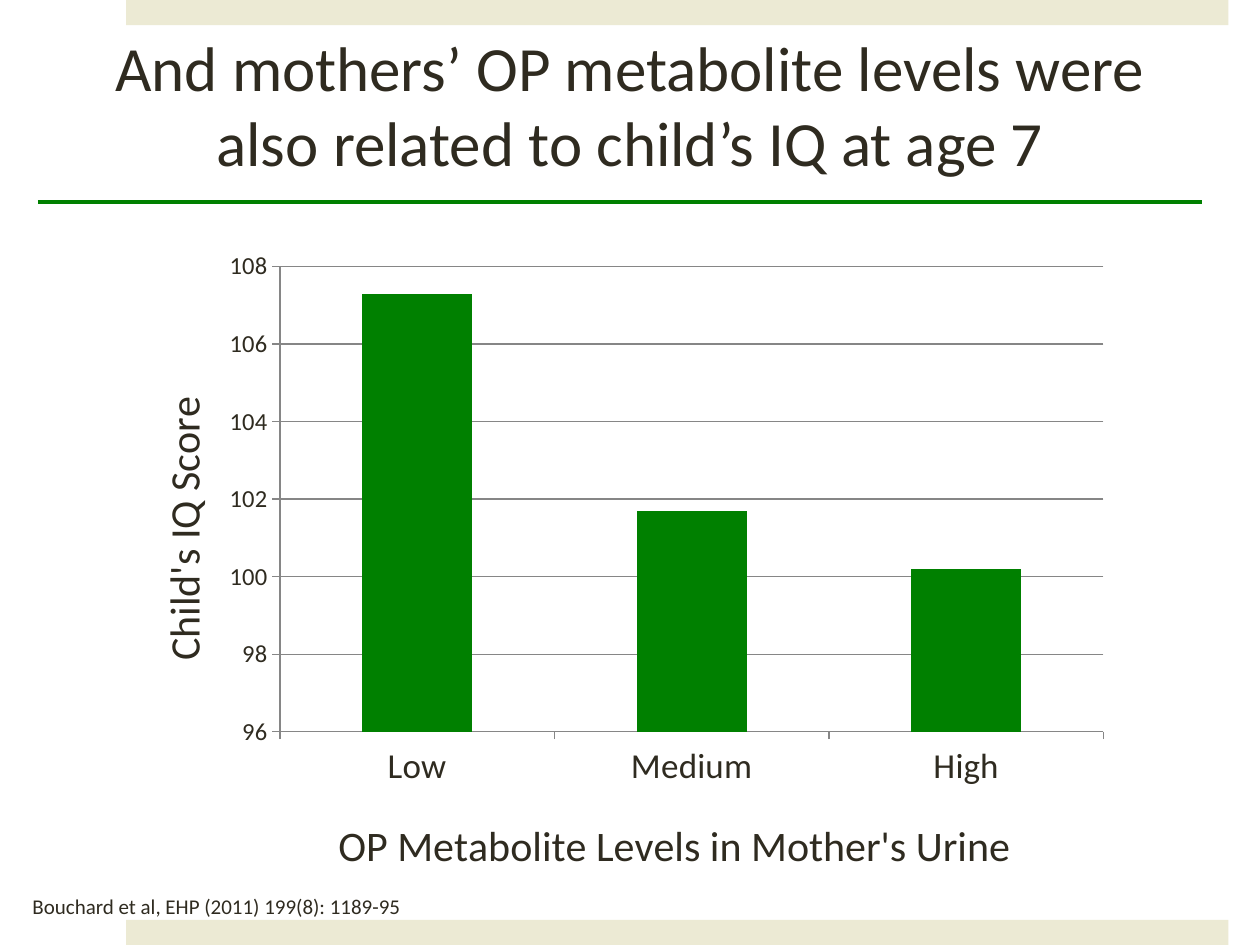
from pptx import Presentation
from pptx.chart.data import CategoryChartData
from pptx.dml.color import RGBColor
from pptx.enum.chart import XL_CHART_TYPE, XL_TICK_MARK
from pptx.enum.shapes import MSO_CONNECTOR, MSO_SHAPE
from pptx.enum.text import MSO_ANCHOR, MSO_AUTO_SIZE, PP_ALIGN
from pptx.oxml import parse_xml
from pptx.oxml.ns import nsdecls, qn
from pptx.util import Inches, Pt

RECTANGLE = MSO_SHAPE.RECTANGLE
STRAIGHT = MSO_CONNECTOR.STRAIGHT
COLUMN_CLUSTERED = XL_CHART_TYPE.COLUMN_CLUSTERED
TICK_OUTSIDE = XL_TICK_MARK.OUTSIDE
TICK_NONE = XL_TICK_MARK.NONE
ANCHOR_MIDDLE = MSO_ANCHOR.MIDDLE
ANCHOR_TOP = MSO_ANCHOR.TOP
FIT_SHAPE = MSO_AUTO_SIZE.SHAPE_TO_FIT_TEXT
FIT_NONE = MSO_AUTO_SIZE.NONE
CENTER = PP_ALIGN.CENTER
LEFT = PP_ALIGN.LEFT

CREAM = RGBColor(0xEC, 0xEA, 0xD4)
GREEN = RGBColor(0x00, 0x80, 0x00)
INK = RGBColor(0x2F, 0x2B, 0x20)
GRAY = RGBColor(0x86, 0x86, 0x86)
FONT_NAME = "Calibri"


def set_attributes(target, values):
    """Set each named attribute of the target."""
    for name, value in values.items():
        setattr(target, name, value)


def format_font(font, size):
    """Give a font the typeface and ink of the slide."""
    set_attributes(font, {"name": FONT_NAME, "size": Pt(size), "bold": False})
    font.color.rgb = INK


def add_band(slide, box):
    """Add a cream decorative band."""
    shape = slide.shapes.add_shape(RECTANGLE, *map(Inches, box))
    shape.shadow.inherit = False
    shape.fill.solid()
    shape.fill.fore_color.rgb = CREAM
    shape.line.fill.background()


def add_rule(slide, left, top, width):
    """Add the green rule below the title."""
    rule = slide.shapes.add_connector(
        STRAIGHT, Inches(left), Inches(top), Inches(left + width), Inches(top)
    )
    rule.line.color.rgb = GREEN
    rule.line.width = Pt(2.25)
    rule._element.spPr.append(parse_xml(f"<a:effectLst {nsdecls('a')}/>"))


def add_text(slide, box, text, size, alignment, frame_values):
    """Add one paragraph of text in the given box."""
    text_frame = slide.shapes.add_textbox(*map(Inches, box)).text_frame
    set_attributes(text_frame, frame_values)
    paragraph = text_frame.paragraphs[0]
    paragraph.text = text
    paragraph.alignment = alignment
    format_font(paragraph.font, size)


def set_layout(parent, position, **fractions):
    """Place a chart part by fractions of the chart area."""
    for layout in parent.findall(qn("c:layout")):
        parent.remove(layout)
    target = '<c:layoutTarget val="inner"/>' if "w" in fractions else ""
    modes = '<c:xMode val="edge"/><c:yMode val="edge"/>'
    sizes = "".join(f'<c:{name} val="{value}"/>' for name, value in fractions.items())
    parent.insert(position, parse_xml(
        f"<c:layout {nsdecls('c')}><c:manualLayout>{target}{modes}{sizes}"
        "</c:manualLayout></c:layout>"
    ))


def format_axis(axis, title, label_size, left, top, values):
    """Style an axis and place its title."""
    set_attributes(axis, {"major_tick_mark": TICK_OUTSIDE,
                          "minor_tick_mark": TICK_NONE, **values})
    axis.format.line.color.rgb = GRAY
    format_font(axis.tick_labels.font, label_size)
    text_frame = axis.axis_title.text_frame
    text_frame.text = title
    format_font(text_frame.paragraphs[0].runs[0].font, 24)
    set_layout(axis.axis_title._element, 1, x=left, y=top)


def add_iq_chart(slide, box):
    """Add the column chart of IQ score by metabolite level."""
    chart_data = CategoryChartData()
    chart_data.categories = ["Low", "Medium", "High"]
    chart_data.add_series("Series 1", [107.3, 101.7, 100.2])
    chart = slide.shapes.add_chart(
        COLUMN_CLUSTERED, *map(Inches, box), chart_data
    ).chart
    set_attributes(chart, {"has_legend": False, "has_title": False})
    format_font(chart.font, 14)
    plot = chart.plots[0]
    set_attributes(plot, {"gap_width": 150, "vary_by_categories": False})
    fill = plot.series[0].format.fill
    fill.solid()
    fill.fore_color.rgb = GREEN
    format_axis(chart.category_axis, "OP Metabolite Levels in Mother's Urine",
                20, 0.22, 0.88, {"has_major_gridlines": False})
    format_axis(chart.value_axis, "Child's IQ Score", 14, 0.04, 0.23,
                {"minimum_scale": 96, "maximum_scale": 108, "major_unit": 2,
                 "has_major_gridlines": True})
    chart.value_axis.major_gridlines.format.line.color.rgb = GRAY
    set_layout(chart._chartSpace.chart.plotArea, 0, x=0.17, y=0.04, w=0.81, h=0.72)


def main():
    """Build and save the slide."""
    presentation = Presentation()
    set_attributes(presentation, {"slide_width": Inches(10), "slide_height": Inches(7.5)})
    slide = presentation.slides.add_slide(presentation.slide_layouts[6])
    for top in (0, 7.3):
        add_band(slide, (1, top, 8.75, 0.2))
    add_rule(slide, 0.3, 1.6, 9.24)
    add_text(slide, (0.5, 0.2, 9, 1.25),
             "And mothers’ OP metabolite levels were also related to child’s IQ at age 7",
             36, CENTER, {"word_wrap": True, "auto_size": FIT_NONE,
                          "vertical_anchor": ANCHOR_MIDDLE})
    add_iq_chart(slide, (0.85, 1.91, 8.07, 5.13))
    add_text(slide, (0.16, 7.04, 3.16, 0.3), "Bouchard et al, EHP (2011) 199(8): 1189-95",
             12, LEFT, {"word_wrap": False, "auto_size": FIT_SHAPE,
                        "vertical_anchor": ANCHOR_TOP})
    presentation.save("out.pptx")


if __name__ == "__main__":
    main()
